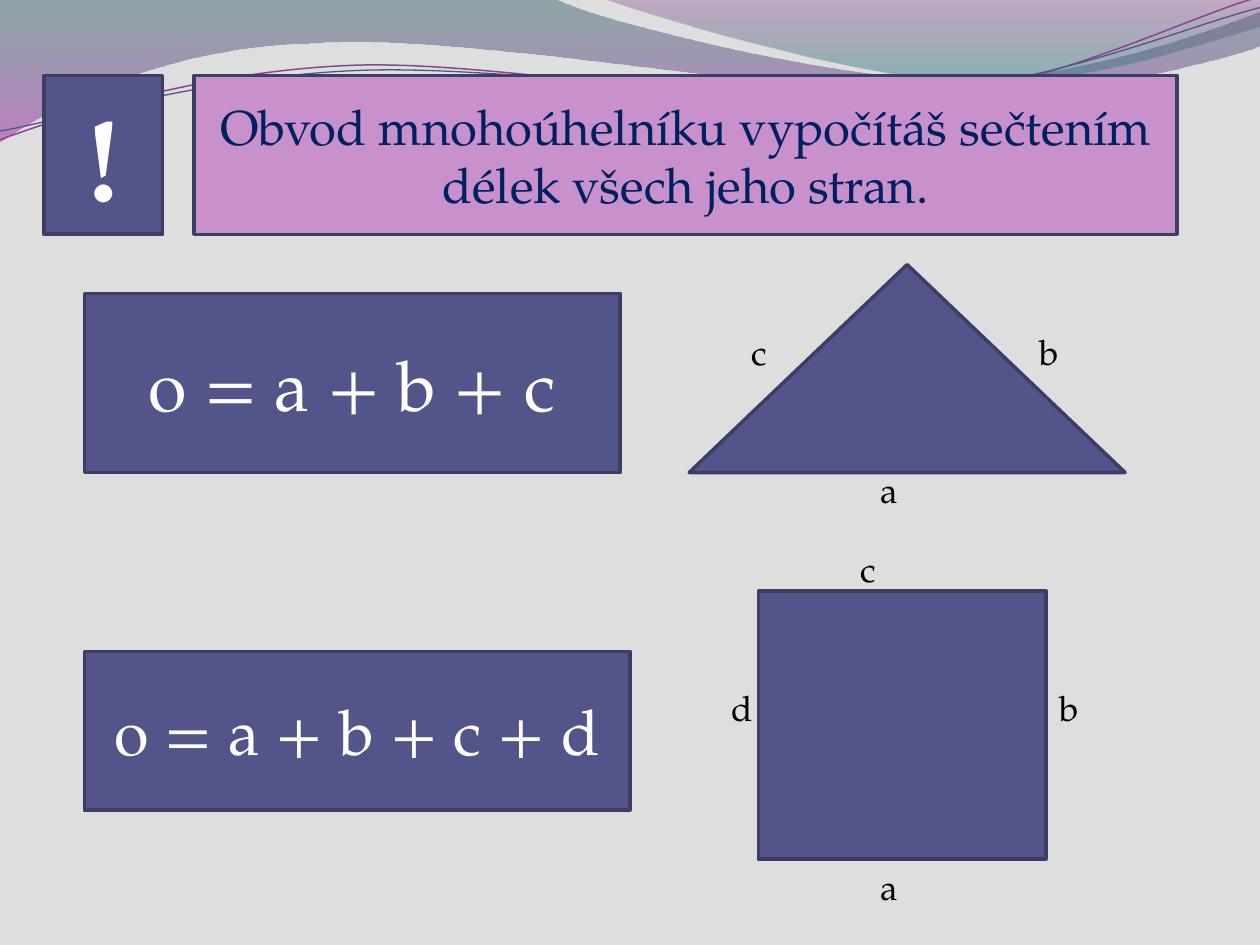
from dataclasses import dataclass

from lxml.etree import SubElement
from pptx import Presentation
from pptx.dml.color import RGBColor as RGB
from pptx.enum.shapes import MSO_SHAPE as SHAPE
from pptx.enum.text import MSO_ANCHOR as ANCHOR, MSO_AUTO_SIZE as AUTO, PP_ALIGN as ALIGN
from pptx.oxml.ns import qn
from pptx.util import Inches, Pt


@dataclass(frozen=True)
class Theme:
    """Colours, font and type sizes of the slide."""
    font: str = "TeX Gyre Pagella"
    back: str = "DEDEDE"
    main: str = "53548A"
    edge: str = "3D3E66"
    rule: str = "C991CB"
    navy: str = "002060"
    white: str = "FFFFFF"
    black: str = "000000"
    edge_width: float = 2
    mark_size: int = 66
    rule_size: int = 28
    label_size: int = 20


T = Theme()

BANDS = [
    ((0, 0), [
        [(4.4, -0.01)],
        [(4.76, 0.17), (6.64, 0.63), (7.58, 0.63)],
        [(8.53, 0.63), (9.58, 0.26), (10, 0.09)],
        [(10.01, 0.36)],
        [(9.83, 0.44), (8.7, 0.76), (7.46, 0.75)],
        [(6.22, 0.75), (3.82, 0.28), (2.57, 0.34)],
        [(1.29, 0.36), (0.46, 0.83), (-0.01, 1.13)],
    ], [(0, "2D6368", 45), (1, "A530A9", 55)]),
    ((4.79, -0.01), [
        [(5.09, 0.11), (6.82, 0.62), (7.69, 0.65)],
        [(8.56, 0.69), (9.61, 0.32), (10, 0.21)],
        [(10, 0)],
    ], [(0, "7F2F82", 30), (0.8, "2F7B82", 45)]),
]
STRANDS = [
    ((0, 1.11), [
        [(0.48, 0.93), (1.58, 0.57), (2.77, 0.52)],
        [(3.95, 0.47), (5.93, 0.89), (7.13, 0.8)],
        [(8.33, 0.71), (9.38, 0.15), (9.98, -0.02)],
    ], "8D4490", 0.85),
    ((0, 1.04), [
        [(0.47, 0.96), (1.64, 0.61), (2.83, 0.56)],
        [(4.03, 0.51), (5.97, 0.84), (7.17, 0.75)],
        [(8.36, 0.67), (9.41, 0.21), (10, 0.06)],
    ], T.main, 0.75),
]


def add_curve(s, start, segments, close):
    """Draw an outline whose three-point segments are cubic curves."""
    builder = s.shapes.build_freeform(*map(Inches, start))
    points = [tuple(map(Inches, point)) for seg in segments for point in seg]
    builder.add_line_segments(points, close=close)
    sp = builder.convert_to_shape()
    sp.shadow.inherit = False
    steps = iter(list(sp._element.iter(qn("a:lnTo"))))
    for seg in segments:
        first, *others = [next(steps) for _ in seg]
        if others:
            curve = first.makeelement(qn("a:cubicBezTo"))
            first.addprevious(curve)
            for step in (first, *others):
                curve.append(step[0])
                step.getparent().remove(step)
    return sp


def add_waves(s):
    """Draw the translucent bands and thin strands along the top."""
    for start, segments, stops in BANDS:
        sp = add_curve(s, start, segments, True)
        sp.line.fill.background()
        sp.fill.gradient()
        sp.fill.gradient_angle = 270
        for stop, (position, color, _) in zip(sp.fill.gradient_stops, stops):
            stop.position = position
            stop.color.rgb = RGB.from_string(color)
        for clr, (_, _, opacity) in zip(sp._element.spPr.iter(qn("a:srgbClr")), stops):
            SubElement(clr, qn("a:alpha")).set("val", str(opacity * 1000))
    for start, segments, color, width in STRANDS:
        sp = add_curve(s, start, segments, False)
        sp.fill.background()
        sp.line.color.rgb = RGB.from_string(color)
        sp.line.width = Pt(width)


def set_text(sp, text, size, color, align=ALIGN.CENTER, bold=False, **frame):
    """Write one formatted paragraph into a shape."""
    tf = sp.text_frame
    for name, value in {"word_wrap": True, "vertical_anchor": ANCHOR.MIDDLE, **frame}.items():
        setattr(tf, name, value)
    p = tf.paragraphs[0]
    p.alignment = align
    r = p.add_run()
    r.text = text
    r.font.color.rgb = RGB.from_string(color)
    for name, value in {"name": T.font, "size": Pt(size), "bold": bold}.items():
        setattr(r.font, name, value)


def paint(sp, fill):
    """Give a shape its fill and the common edge."""
    sp.fill.solid()
    sp.fill.fore_color.rgb = RGB.from_string(fill)
    sp.line.color.rgb = RGB.from_string(T.edge)
    sp.line.width = Pt(T.edge_width)


def add_block(s, box, kind=SHAPE.RECTANGLE):
    """Add a filled preset shape in the main colour."""
    sp = s.shapes.add_shape(kind, *map(Inches, box))
    sp.shadow.inherit = False
    paint(sp, T.main)
    return sp


def add_heading(s, box, text):
    """Place the exclamation mark and the rule as title."""
    left, top, width, height = box
    mark_width, gap = 0.94, 0.25
    mark = add_block(s, (left, top, mark_width, height))
    set_text(mark, "!", T.mark_size, T.white, bold=True)
    title = s.shapes.title
    s.shapes._spTree.append(title._element)
    offset = mark_width + gap
    place = (left + offset, top, width - offset, height)
    for name, value in zip(("left", "top", "width", "height"), place):
        setattr(title, name, Inches(value))
    paint(title, T.rule)
    set_text(title, text, T.rule_size, T.navy, auto_size=AUTO.NONE)


def add_formula(s, box, text, size):
    """Place a perimeter formula in its box."""
    set_text(add_block(s, box), text, size, T.white)


def add_polygon(s, box, kind, labels):
    """Draw a polygon with side labels offset from its corner."""
    add_block(s, box, kind)
    for text, dx, dy, width in labels:
        place = (box[0] + dx, box[1] + dy, width, 0.44)
        tb = s.shapes.add_textbox(*map(Inches, place))
        set_text(tb, text, T.label_size, T.black, ALIGN.LEFT,
                 vertical_anchor=ANCHOR.TOP, auto_size=AUTO.SHAPE_TO_FIT_TEXT)


def main():
    """Build and save the slide."""
    prs = Presentation()
    prs.slide_width, prs.slide_height = Inches(10), Inches(7.5)
    s = prs.slides.add_slide(prs.slide_layouts[5])
    s.background.fill.solid()
    s.background.fill.fore_color.rgb = RGB.from_string(T.back)
    add_waves(s)
    add_heading(s, (0.35, 0.6, 8.99, 1.26),
                "Obvod mnohoúhelníku vypočítáš sečtením délek všech jeho stran.")
    add_polygon(s, (5.47, 2.1, 3.46, 1.65), SHAPE.ISOSCELES_TRIANGLE, [
        ("b", 2.68, 0.47, 0.63), ("a", 1.42, 1.57, 0.71), ("c", 0.4, 0.47, 0.63)])
    add_formula(s, (0.67, 2.33, 4.25, 1.42), "o = a + b + c", 40)
    add_polygon(s, (6.02, 4.69, 2.28, 2.13), SHAPE.RECTANGLE, [
        ("a", 0.87, 2.13, 0.55), ("b", 2.29, 0.71, 0.71),
        ("c", 0.71, -0.39, 0.39), ("d", -0.31, 0.71, 0.24)])
    add_formula(s, (0.67, 5.17, 4.33, 1.26), "o = a + b + c + d", 36)
    prs.save("out.pptx")


if __name__ == "__main__":
    main()
